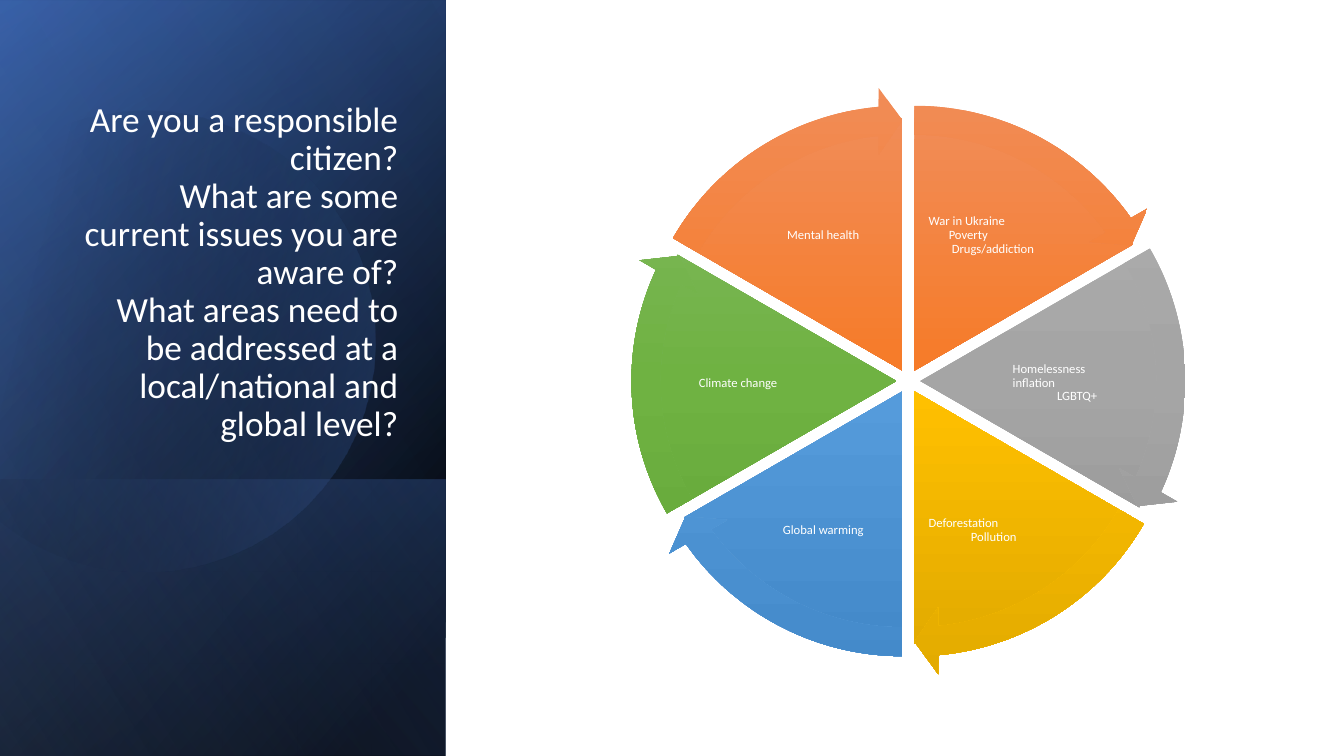
from math import cos, sin, radians
from lxml.etree import SubElement
from pptx import Presentation
from pptx.dml.color import RGBColor
from pptx.enum.shapes import MSO_SHAPE
from pptx.enum.text import MSO_ANCHOR, MSO_AUTO_SIZE, PP_ALIGN
from pptx.oxml.ns import qn
from pptx.util import Inches, Pt

FONT = "Calibri"
WHITE = "FFFFFF"
TITLE = [
    "Are you a responsible citizen?",
    "What are some current issues you are aware of?",
    "What areas need to be addressed at a local/national and global level?",
]

# Box, gradient stops (position, colour, opacity) and gradient angle
PANELS = [
    ((-1.54, 1.54, 7.5, 4.42), [(8, "000000", 100), (100, "2F5597", 100)], 50),
    ((-1.54, 1.55, 7.5, 4.42), [(0, "000000", 0), (99, "4472C4", 46)], 30),
    ((0.84, 3.92, 2.74, 4.42), [(2, "4472C4", 29), (100, "000000", 30)], 130),
]
SHEEN = ((-1.54, 1.54, 7.5, 4.42), [(0, "000000", 0), (99, "8FAADC", 11)], 120)

# Disc outline on the slide: a point, or the three points of a curve
DISC = [
    [(1.49, 1.1)],
    [(2.46, 1.12), (3.35, 1.77), (3.63, 2.75)],
    [(3.98, 3.97), (3.28, 5.23), (2.07, 5.58)],
    [(1.31, 5.8), (0.53, 5.61), (-0.03, 5.14)],
    [(-0.15, 5.03)],
    [(-0.15, 1.75)],
    [(0, 1.61)],
    [(0.23, 1.42), (0.5, 1.28), (0.8, 1.19)],
    [(1.03, 1.13), (1.26, 1.1), (1.49, 1.1)],
]
DISC_MID = (1.585, 3.345)
DISC_TURN = 343.9
DISC_STOPS = [(29, "000000", 0), (100, "4472C4", 43)]

ORANGE = ("F18C57", "F67B28", "E56C19")
GREY = ("AFAFAF", "A5A5A5", "939393")
GOLD = ("FFC64B", "FFC000", "E3AB00")
BLUE = ("71A6DB", "559BDB", "448ACA")
GREEN = ("81B861", "6FB242", "62A336")

# Clockwise from the top: colours, then lines with a left indent (None is centred)
ISSUES = [
    (ORANGE, [("War in Ukraine", 0), ("Poverty", 0.2), ("Drugs/addiction", 0.23)]),
    (GREY, [("Homelessness", 0.02), ("inflation", 0.02), ("LGBTQ+", 0.46)]),
    (GOLD, [("Deforestation", 0), ("Pollution", 0.42)]),
    (BLUE, [("Global warming", None)]),
    (GREEN, [("Climate change", None)]),
    (ORANGE, [("Mental health", None)]),
]
HUB = (9.01, 3.78)
LABEL_HUB = (9.01, 3.8)
GAP = 0.12
REACH = 1.69
PIE = 5.01
RING = 5.63
STEP = 360 / len(ISSUES)
TURN = 0.6  # adjustment units in one degree


def shade(shape, stops, angle):
    shape.shadow.inherit = False
    shape.line.fill.background()
    shape.fill.gradient()
    grad = shape.element.spPr.find(qn("a:gradFill"))
    marks = grad.find(qn("a:gsLst"))
    for mark in list(marks):
        marks.remove(mark)
    for place, tint, solid in stops:
        mark = SubElement(marks, qn("a:gs"), pos=str(place * 1000))
        hue = SubElement(mark, qn("a:srgbClr"), val=tint)
        if solid < 100:
            SubElement(hue, qn("a:alpha"), val=str(solid * 1000))
    grad.find(qn("a:lin")).set("ang", str(angle * 60000))


def polar(mid, size, angle):
    return (mid[0] + size * cos(radians(angle)),
            mid[1] + size * sin(radians(angle)))


def centred(mid, wide, high):
    return [Inches(v) for v in (mid[0] - wide / 2, mid[1] - high / 2, wide, high)]


def write(para, text, size):
    run = para.add_run()
    run.text = text
    run.font.name = FONT
    run.font.size = Pt(size)
    run.font.color.rgb = RGBColor.from_string(WHITE)


def add_panel(shapes, box, stops, angle):
    panel = shapes.add_shape(MSO_SHAPE.RECTANGLE, *map(Inches, box))
    panel.rotation = 90
    panel.element.spPr.xfrm.set("flipH", "1")
    shade(panel, stops, angle)


def trace(steps=16):
    """Give the disc outline as points, with its curves sampled."""
    points = []
    for part in DISC:
        if len(part) == 1:
            points += part
            continue
        knots = [points[-1], *part]
        for i in range(1, steps + 1):
            t = i / steps
            weights = ((1 - t) ** 3, 3 * t * (1 - t) ** 2, 3 * t * t * (1 - t), t ** 3)
            points.append(tuple(sum(w * k[axis] for w, k in zip(weights, knots))
                                for axis in (0, 1)))
    return points


def add_disc(shapes):
    turn = radians(360 - DISC_TURN)
    points = []
    for x, y in trace():
        dx, dy = x - DISC_MID[0], y - DISC_MID[1]
        points.append((Inches(DISC_MID[0] + dx * cos(turn) - dy * sin(turn)),
                       Inches(DISC_MID[1] + dx * sin(turn) + dy * cos(turn))))
    pen = shapes.build_freeform(*points[0])
    pen.add_line_segments(points[1:], close=True)
    disc = pen.convert_to_shape()
    disc.rotation = DISC_TURN
    shade(disc, DISC_STOPS, 30)


def add_part(shapes, kind, angle, size, tints, adjust):
    part = shapes.add_shape(kind, *centred(polar(HUB, GAP, angle), size, size))
    for i, value in enumerate(adjust):
        part.adjustments[i] = value
    shade(part, [(p, tint, 100) for p, tint in zip((0, 50, 100), tints)], 90)


def add_label(shapes, angle, lines):
    wide, high = (1.37, 0.98) if angle % 180 == 0 else (1.31, 1.01)
    box = shapes.add_textbox(*centred(polar(LABEL_HUB, REACH, angle), wide, high))
    frame = box.text_frame
    frame.word_wrap = True
    frame.vertical_anchor = MSO_ANCHOR.MIDDLE
    frame.margin_left = frame.margin_right = Inches(0.01)
    frame.margin_top = frame.margin_bottom = Inches(0.01)
    for i, (text, indent) in enumerate(lines):
        para = frame.add_paragraph() if i else frame.paragraphs[0]
        para.line_spacing = 0.9
        para.alignment = PP_ALIGN.CENTER if indent is None else PP_ALIGN.LEFT
        if indent:
            para._p.get_or_add_pPr().set("marL", str(Inches(indent)))
        write(para, text, 9)


def add_title(slide):
    title = slide.shapes.title
    slide.shapes.element.append(title.element)
    title.left, title.top, title.width, title.height = map(
        Inches, (0.64, 1.84, 3.41, 2.62))
    frame = title.text_frame
    frame.word_wrap = True
    frame.auto_size = MSO_AUTO_SIZE.NONE
    frame.vertical_anchor = MSO_ANCHOR.BOTTOM
    para = frame.paragraphs[0]
    para.alignment = PP_ALIGN.RIGHT
    para.line_spacing = 0.9
    for i, text in enumerate(TITLE):
        if i:
            para.add_line_break()
        write(para, text, 25.2)


def add_wheel(slide):
    shapes = slide.shapes.add_group_shape().shapes
    angles = [i * STEP - 60 for i in range(len(ISSUES))]
    starts = [(a - STEP / 2) % 360 * TURN for a in angles]
    for (tints, lines), angle, start in zip(ISSUES, angles, starts):
        end = (start + STEP * TURN) % (360 * TURN)
        add_part(shapes, MSO_SHAPE.PIE, angle, PIE, tints, (start, end))
        add_label(shapes, angle, lines)
    for (tints, _), angle, start in zip(ISSUES, angles, starts):
        tip = (start + 32.725) % (360 * TURN)
        add_part(shapes, MSO_SHAPE.CIRCULAR_ARROW, angle, RING, tints,
                 (0.051, 3.275, tip, start, 0.059))


def main():
    deck = Presentation()
    deck.slide_width, deck.slide_height = Inches(13.33), Inches(7.5)
    slide = deck.slides.add_slide(deck.slide_layouts[5])
    for panel in PANELS:
        add_panel(slide.shapes, *panel)
    add_disc(slide.shapes)
    add_panel(slide.shapes, *SHEEN)
    add_title(slide)
    add_wheel(slide)
    deck.save("out.pptx")


if __name__ == "__main__":
    main()
